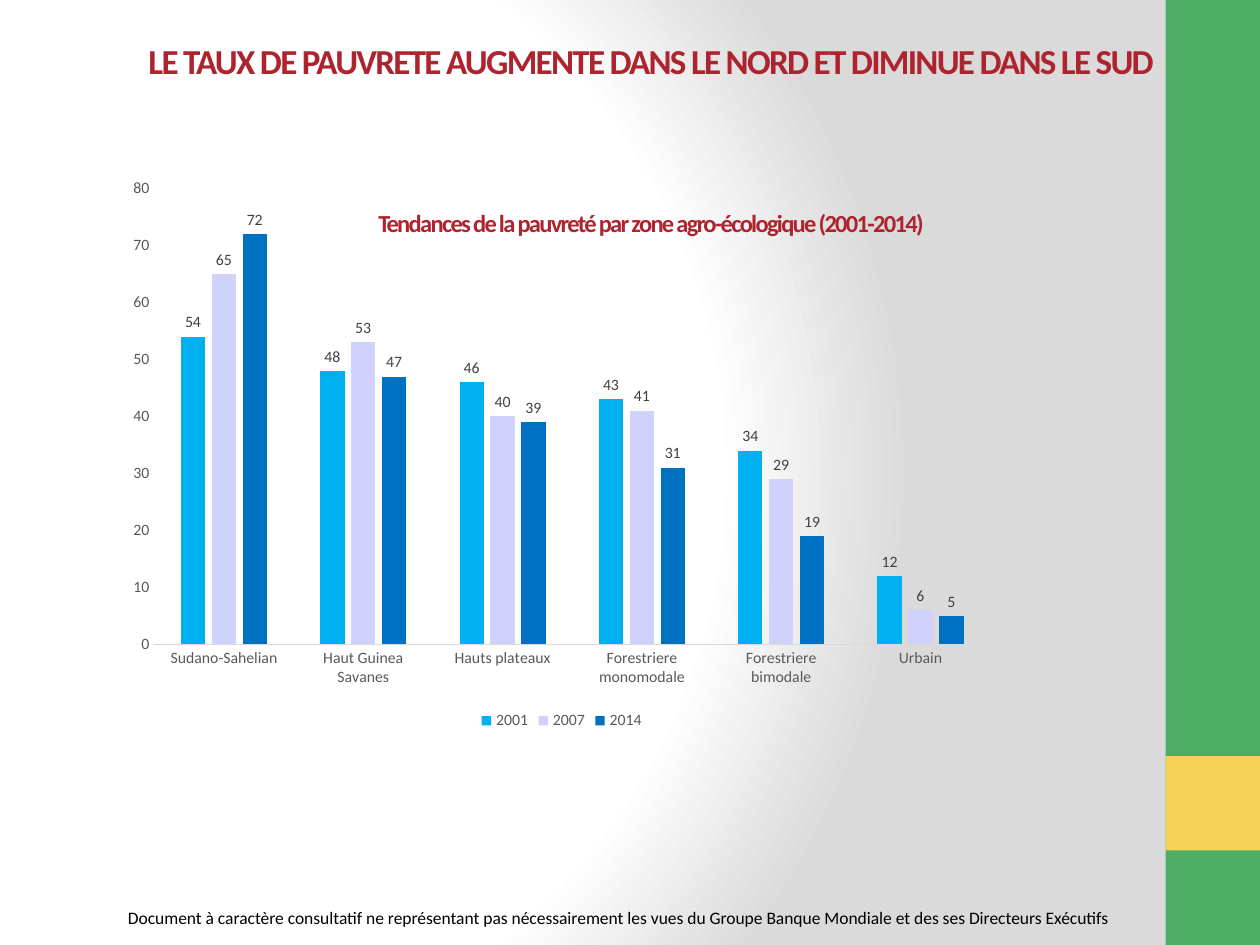
from pptx import Presentation
from pptx.chart.data import CategoryChartData
from pptx.dml.color import RGBColor
from pptx.enum.chart import XL_CHART_TYPE, XL_LABEL_POSITION, XL_LEGEND_POSITION, XL_TICK_MARK
from pptx.enum.shapes import MSO_SHAPE
from pptx.enum.text import MSO_ANCHOR, MSO_AUTO_SIZE, PP_ALIGN
from pptx.oxml import parse_xml
from pptx.oxml.ns import nsdecls
from pptx.util import Inches, Pt


def color(code):
    return RGBColor.from_string(code)


class Deck:
    face = "Calibri"
    red, green, gold = "AD242F", "50AD68", "F4D356"
    ink, gray, dark, rule = "000000", "595959", "404040", "D9D9D9"
    cols, rows = 120, 90

    def __init__(self):
        self.prs = Presentation()
        self.prs.slide_width, self.prs.slide_height = Inches(10), Inches(7.5)
        self.slide = self.prs.slides.add_slide(self.prs.slide_layouts[5])

    def grid(self, col, row, wide, high):
        unit_x = self.prs.slide_width / self.cols
        unit_y = self.prs.slide_height / self.rows
        return [round(n) for n in (col * unit_x, row * unit_y, wide * unit_x, high * unit_y)]

    def style(self, font, size, code, bold=False):
        font.name, font.size, font.bold = self.face, Pt(size), bold
        font.color.rgb = color(code)

    def backdrop(self, stops, edges):
        self.slide.background.fill.gradient()
        old = self.slide.element.xpath(".//p:bgPr/a:gradFill")[0]
        marks = "".join(
            f'<a:gs pos="{pos * 1000}"><a:srgbClr val="{code}"/></a:gs>' for pos, code in stops
        )
        sides = " ".join(f'{side}="{n * 1000}"' for side, n in zip("ltrb", edges))
        new = parse_xml(
            f'<a:gradFill {nsdecls("a")} rotWithShape="1"><a:gsLst>{marks}</a:gsLst>'
            f'<a:path path="circle"><a:fillToRect {sides}/></a:path></a:gradFill>'
        )
        old.getparent().replace(old, new)

    def band(self, place, code):
        shape = self.slide.shapes.add_shape(MSO_SHAPE.RECTANGLE, *self.grid(*place))
        shape.shadow.inherit = False
        shape.fill.solid()
        shape.fill.fore_color.rgb = color(code)
        shape.line.fill.background()

    def title(self, place, lines, gap):
        box = self.slide.shapes.title
        box.left, box.top, box.width, box.height = self.grid(*place)
        frame = box.text_frame
        frame.word_wrap, frame.auto_size = True, MSO_AUTO_SIZE.NONE
        frame.vertical_anchor = MSO_ANCHOR.MIDDLE
        for i, (text, size) in enumerate(lines):
            para = frame.add_paragraph() if i else frame.paragraphs[0]
            para.alignment = PP_ALIGN.CENTER
            para.space_before = Pt(gap if i else 0)
            run = para.add_run()
            run.text = text
            self.style(run.font, size, self.red, True)
            run.font._element.set("spc", "-100")

    def note(self, place, text):
        frame = self.slide.shapes.add_textbox(*self.grid(*place)).text_frame
        frame.word_wrap = True
        run = frame.paragraphs[0].add_run()
        run.text = text
        self.style(run.font, 10, self.ink)

    def chart(self, place, cats, series):
        data = CategoryChartData(number_format="0")
        data.categories = cats
        for name, _, vals in series:
            data.add_series(name, vals)
        chart = self.slide.shapes.add_chart(
            XL_CHART_TYPE.COLUMN_CLUSTERED, *self.grid(*place), data
        ).chart
        self.style(chart.font, 10, self.ink)
        chart.has_title = False
        chart.has_legend = True
        chart.legend.position = XL_LEGEND_POSITION.BOTTOM
        chart.legend.include_in_layout = False
        self.style(chart.legend.font, 9, self.gray)
        for axis in (chart.category_axis, chart.value_axis):
            axis.major_tick_mark = axis.minor_tick_mark = XL_TICK_MARK.NONE
            axis.has_major_gridlines = False
            self.style(axis.tick_labels.font, 9, self.gray)
        line = chart.category_axis.format.line
        line.color.rgb, line.width = color(self.rule), Pt(0.75)
        scale = chart.value_axis
        scale.format.line.fill.background()
        scale.minimum_scale, scale.maximum_scale, scale.major_unit = 0, 80, 10
        scale.tick_labels.number_format = "0"
        scale.tick_labels.number_format_is_linked = False
        plot = chart.plots[0]
        plot.gap_width, plot.overlap, plot.vary_by_categories = 219, -27, False
        for bars, (_, code, _) in zip(plot.series, series):
            bars.format.fill.solid()
            bars.format.fill.fore_color.rgb = color(code)
            tags = bars.data_labels
            tags.show_value, tags.position = True, XL_LABEL_POSITION.OUTSIDE_END
            tags.number_format, tags.number_format_is_linked = "0", False
            self.style(tags.font, 9, self.dark)
        clear = (
            f'<c:spPr {nsdecls("c", "a")}><a:noFill/><a:ln><a:noFill/></a:ln></c:spPr>'
        )
        root = chart._chartSpace
        root.xpath("c:chart")[0].addnext(parse_xml(clear))
        root.xpath("c:chart/c:plotArea")[0].append(parse_xml(clear))


def main():
    deck = Deck()
    deck.backdrop([(0, "FFFFFF"), (75, "FFFFFF"), (100, "DADADA")], (20, 50, 100, 50))
    deck.band((111, 0, 9, 90), deck.green)
    deck.band((111, 72, 9, 9), deck.gold)
    deck.note(
        (11, 85.8, 106, 3.2),
        "Document à caractère consultatif ne représentant pas nécessairement les vues "
        "du Groupe Banque Mondiale et des ses Directeurs Exécutifs",
    )
    deck.title(
        (12, 9, 100, 8.4),
        [
            ("LE TAUX DE PAUVRETE AUGMENTE DANS LE NORD ET DIMINUE DANS LE SUD", 20),
            ("Tendances de la pauvreté par zone agro-écologique (2001-2014)", 14),
        ],
        72,
    )
    deck.chart(
        (11, 16, 85, 54),
        ["Sudano-Sahelian", "Haut Guinea Savanes", "Hauts plateaux",
         "Forestriere monomodale", "Forestriere bimodale", "Urbain"],
        [
            ("2001", "00B0F0", (54, 48, 46, 43, 34, 12)),
            ("2007", "D0D1FD", (65, 53, 40, 41, 29, 6)),
            ("2014", "0070C0", (72, 47, 39, 31, 19, 5)),
        ],
    )
    deck.prs.save("out.pptx")


if __name__ == "__main__":
    main()
